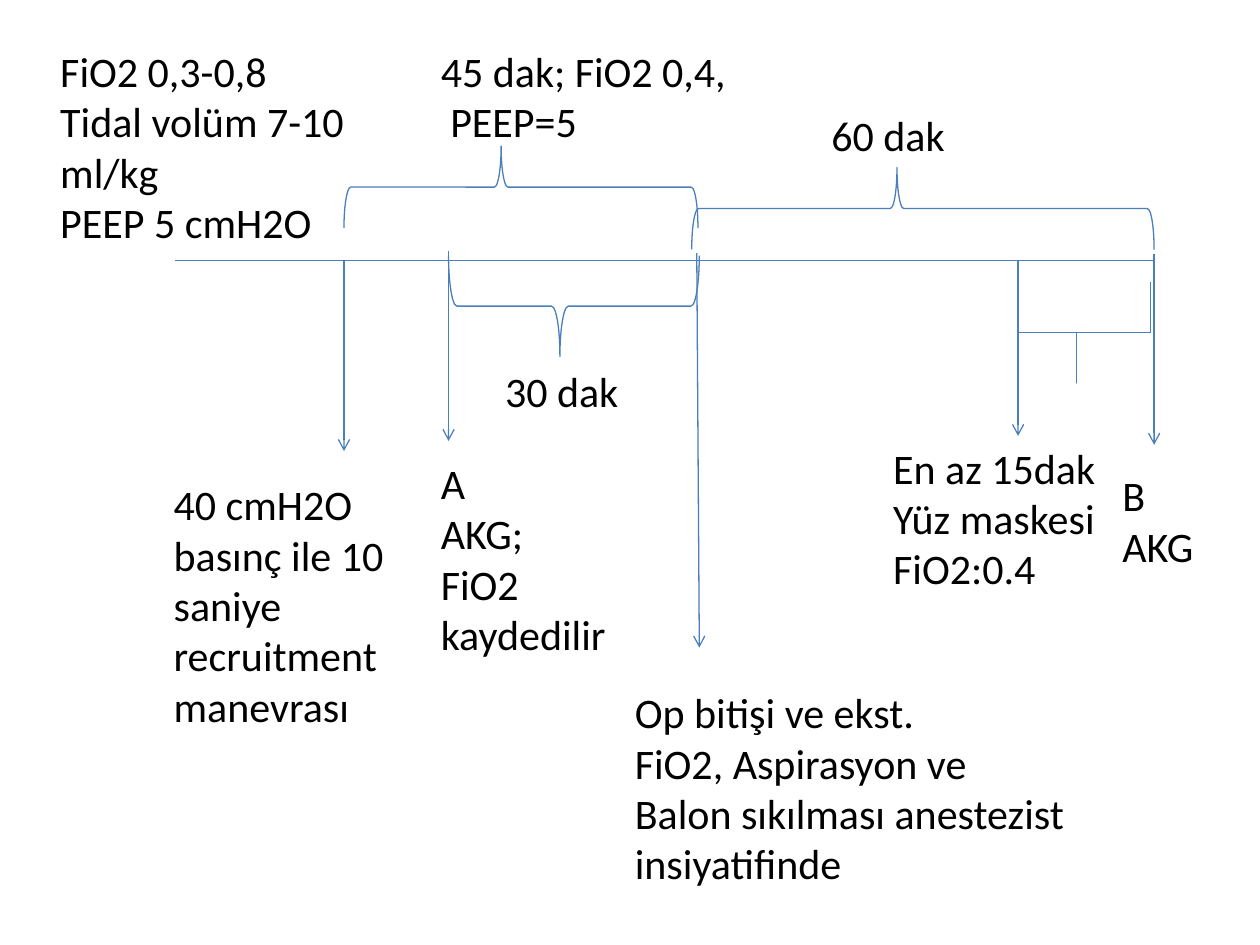
from lxml import etree
from pptx import Presentation
from pptx import util as u
from pptx.dml.color import RGBColor
from pptx.enum import shapes, text
from pptx.oxml import ns

COLORS = {"line": "4B7EBC", "text": "000000"}
AXIS = (1.39, 2.07, 9.16, 2.07)
ARROWS = [
    (2.73, 2.07, 2.73, 3.58),
    (3.56, 1.99, 3.56, 3.5),
    (5.53, 2.01, 5.55, 5.14),
    (8.08, 2.07, 8.08, 3.46),
    (9.16, 2.02, 9.16, 3.53),
]
BRACES = [
    (2.73, 1.16, 2.81, 0.65, "up", 0.083),
    (5.49, 1.33, 3.67, 0.65, "up", 0.083),
    (3.56, 2.03, 1.99, 0.8, "down", 0.083),
    (8.08, 2.24, 1.05, 0.8, "down", 0),
]
LABELS = [
    (0.38, 0.31, 3.07, 1.72, True, ["FiO2 0,3-0,8", "Tidal volüm 7-10 ml/kg", "PEEP 5 cmH2O"]),
    (3.4, 0.31, 2.48, 1.31, False, ["45 dak; FiO2 0,4,", " PEEP=5"]),
    (6.5, 0.82, 1.11, 0.5, False, ["60 dak"]),
    (3.91, 2.85, 1.11, 0.91, False, ["30 dak"]),
    (1.28, 3.75, 2.25, 2.12, True, ["40 cmH2O basınç ile 10 saniye recruitment manevrası"]),
    (3.4, 3.58, 1.88, 1.72, True, ["A", "AKG;", "FiO2 kaydedilir"]),
    (4.94, 5.4, 4.17, 1.72, True,
     ["Op bitişi ve ekst.", "FiO2, Aspirasyon ve", "Balon sıkılması anestezist insiyatifinde"]),
    (6.99, 3.46, 1.82, 1.31, False, ["En az 15dak", "Yüz maskesi", "FiO2:0.4"]),
    (8.81, 3.68, 1.07, 0.91, True, ["B", "AKG"]),
]
TIP = 0.444


def style_line(shape):
    shape.line.color.rgb = RGBColor.from_string(COLORS["line"])
    shape.line.width = u.Pt(0.75)


def add_line(slide, ends, arrow=False):
    connector = slide.shapes.add_connector(
        shapes.MSO_CONNECTOR.STRAIGHT, *[u.Inches(value) for value in ends])
    style_line(connector)
    properties = connector._element.spPr
    if arrow:
        line = properties.find(ns.qn("a:ln"))
        etree.SubElement(line, ns.qn("a:tailEnd"), type="arrow")
    etree.SubElement(properties, ns.qn("a:effectLst"))


def add_brace(slide, left, top, span, depth, direction, curve):
    offset = (span - depth) / 2
    brace = slide.shapes.add_shape(
        shapes.MSO_SHAPE.RIGHT_BRACE, u.Inches(left + offset), u.Inches(top - offset),
        u.Inches(depth), u.Inches(span))
    brace.rotation = 270 if direction == "up" else 90
    brace.adjustments[0] = curve
    brace.adjustments[1] = TIP if direction == "up" else 1 - TIP
    brace.shadow.inherit = False
    brace.fill.background()
    style_line(brace)


def add_label(slide, left, top, width, height, wrap, lines):
    box = slide.shapes.add_textbox(*[u.Inches(value) for value in (left, top, width, height)])
    frame = box.text_frame
    frame.word_wrap = wrap
    frame.auto_size = text.MSO_AUTO_SIZE.SHAPE_TO_FIT_TEXT
    frame.text = "\n".join(lines)
    for paragraph in frame.paragraphs:
        paragraph.font.name = "Calibri"
        paragraph.font.size = u.Pt(24)
        paragraph.font.color.rgb = RGBColor.from_string(COLORS["text"])


def main():
    presentation = Presentation()
    presentation.slide_width = u.Inches(10)
    presentation.slide_height = u.Inches(7.5)
    slide = presentation.slides.add_slide(presentation.slide_layouts[6])
    add_line(slide, AXIS)
    for ends in ARROWS:
        add_line(slide, ends, arrow=True)
    for brace in BRACES:
        add_brace(slide, *brace)
    for label in LABELS:
        add_label(slide, *label)
    presentation.save("out.pptx")


if __name__ == "__main__":
    main()
